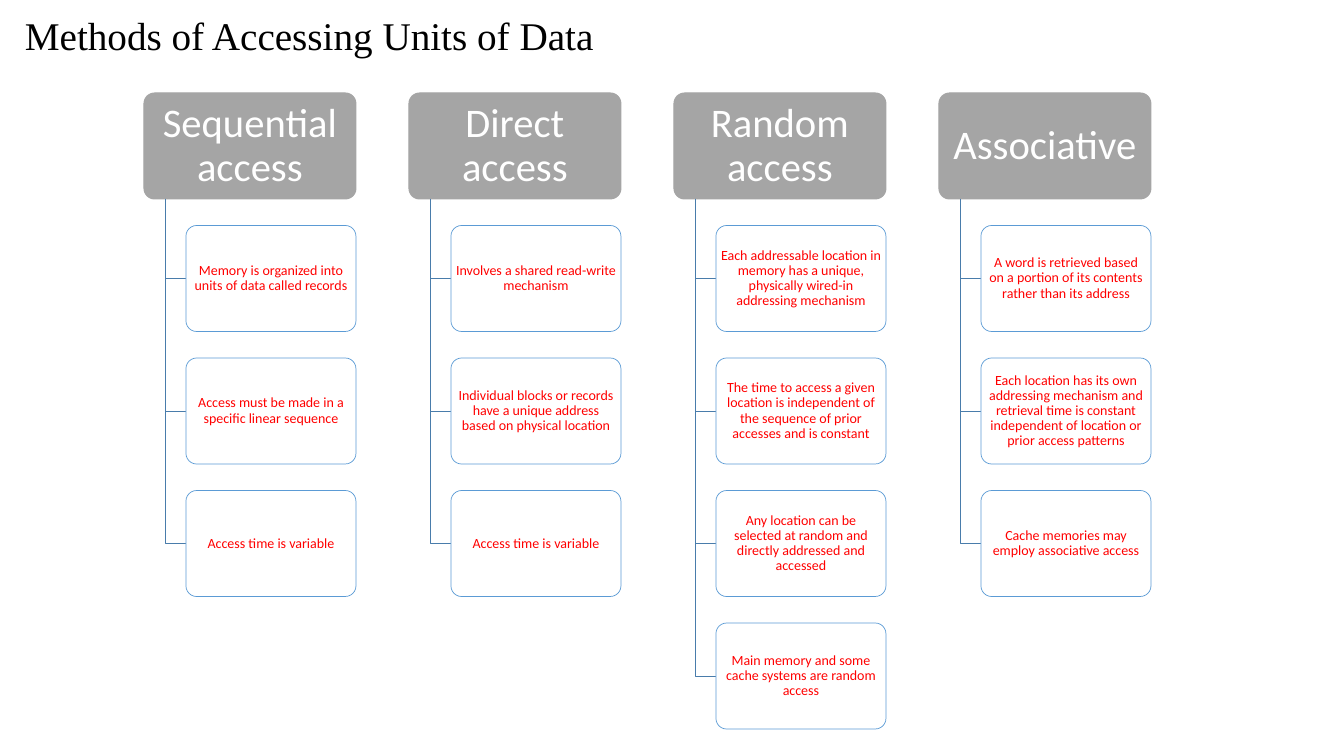
from dataclasses import dataclass

from pptx import Presentation
from pptx.dml.color import RGBColor
from pptx.enum.shapes import MSO_SHAPE
from pptx.enum.text import MSO_ANCHOR, PP_ALIGN
from pptx.oxml.ns import qn
from pptx.shapes.autoshape import Shape
from pptx.slide import Slide
from pptx.text.text import TextFrame
from pptx.util import Pt
from lxml import etree

ROUND = MSO_SHAPE.ROUNDED_RECTANGLE
CENTER, LEFT = PP_ALIGN.CENTER, PP_ALIGN.LEFT
MIDDLE = MSO_ANCHOR.MIDDLE

PX = 914400 / 100.8


@dataclass(frozen=True)
class Font:
    name: str
    size: int
    color: str


@dataclass(frozen=True)
class Card:
    fill: str
    alpha: int
    line: str
    weight: float
    font: Font
    pad: tuple[int, int]


@dataclass(frozen=True)
class Theme:
    title: Font = Font("Times New Roman", 28, "000000")
    head: Card = Card("A5A5A5", 100, "A5A5A5", 0.75,
                      Font("Calibri", 29, "FFFFFF"), (6, 4))
    fact: Card = Card("FFFFFF", 90, "5B9BD5", 0.5,
                      Font("Calibri", 10, "FF0000"), (2, 1))
    branch: str = "497CAB"


@dataclass(frozen=True)
class Method:
    name: str
    facts: tuple[str, ...]


THEME = Theme()
METHODS = (
    Method("Sequential access", (
        "Memory is organized into units of data called records",
        "Access must be made in a specific linear sequence",
        "Access time is variable",
    )),
    Method("Direct access", (
        "Involves a shared read-write mechanism",
        "Individual blocks or records have a unique address based on "
        "physical location",
        "Access time is variable",
    )),
    Method("Random access", (
        "Each addressable location in memory has a unique, physically "
        "wired-in addressing mechanism",
        "The time to access a given location is independent of the sequence "
        "of prior accesses and is constant",
        "Any location can be selected at random and directly addressed and "
        "accessed",
        "Main memory and some cache systems are random access",
    )),
    Method("Associative", (
        "A word is retrieved based on a portion of its contents rather than "
        "its address",
        "Each location has its own addressing mechanism and retrieval time is "
        "constant independent of location or prior access patterns",
        "Cache memories may employ associative access",
    )),
)

HEAD_X, HEAD_Y, HEAD_W = 144, 93, 212
CARD_H = 106
STEM, INDENT = 21, 42
COL_STEP = 265
ROW_STEP = COL_STEP / 2


def px(n: float) -> int:
    return round(n * PX)


def write(frame: TextFrame, text: str, font: Font, align: PP_ALIGN) -> None:
    frame.word_wrap = True
    frame.text = text
    para = frame.paragraphs[0]
    para.alignment = align
    para.line_spacing = 0.9
    face = para.runs[0].font
    face.name, face.size = font.name, Pt(font.size)
    face.color.rgb = RGBColor.from_string(font.color)


def outline(shape: Shape, color: str, weight: float) -> None:
    shape.shadow.inherit = False
    shape.line.color.rgb = RGBColor.from_string(color)
    shape.line.width = Pt(weight)


def add_card(slide: Slide, x: int, y: float, w: int, text: str,
             card: Card) -> None:
    shape = slide.shapes.add_shape(ROUND, px(x), px(y), px(w), px(CARD_H))
    shape.adjustments[0] = 0.1
    shape.fill.solid()
    shape.fill.fore_color.rgb = RGBColor.from_string(card.fill)
    if card.alpha < 100:
        color = next(shape.element.spPr.iter(qn("a:srgbClr")))
        etree.SubElement(color, qn("a:alpha"), val=str(card.alpha * 1000))
    outline(shape, card.line, card.weight)
    frame = shape.text_frame
    frame.margin_left = frame.margin_right = px(card.pad[0])
    frame.margin_top = frame.margin_bottom = px(card.pad[1])
    frame.vertical_anchor = MIDDLE
    write(frame, text, card.font, CENTER)


def add_branch(slide: Slide, x: int, top: int, end: float) -> None:
    """Draw an elbow down from a header and right to a fact."""
    pen = slide.shapes.build_freeform(px(x), px(top))
    pen.add_line_segments(
        [(px(x), px(end)), (px(x + INDENT - STEM), px(end))], close=False)
    elbow = pen.convert_to_shape()
    elbow.fill.background()
    outline(elbow, THEME.branch, THEME.fact.weight)


def add_method(slide: Slide, x: int, method: Method) -> None:
    add_card(slide, x, HEAD_Y, HEAD_W, method.name, THEME.head)
    for row, fact in enumerate(method.facts, 1):
        y = HEAD_Y + row * ROW_STEP
        add_branch(slide, x + STEM, HEAD_Y + CARD_H, y + CARD_H / 2)
        add_card(slide, x + INDENT, y, HEAD_W - INDENT, fact, THEME.fact)


def add_title(slide: Slide, text: str) -> None:
    box = slide.shapes.add_textbox(px(15), px(12), px(1317), px(731))
    write(box.text_frame, text, THEME.title, LEFT)
    box.text_frame.paragraphs[0].space_before = Pt(10)


def main() -> None:
    deck = Presentation()
    deck.slide_width, deck.slide_height = px(1344), px(756)
    slide = deck.slides.add_slide(deck.slide_layouts[6])
    add_title(slide, "Methods of Accessing Units of Data")
    for col, method in enumerate(METHODS):
        add_method(slide, HEAD_X + col * COL_STEP, method)
    deck.save("out.pptx")


if __name__ == "__main__":
    main()
